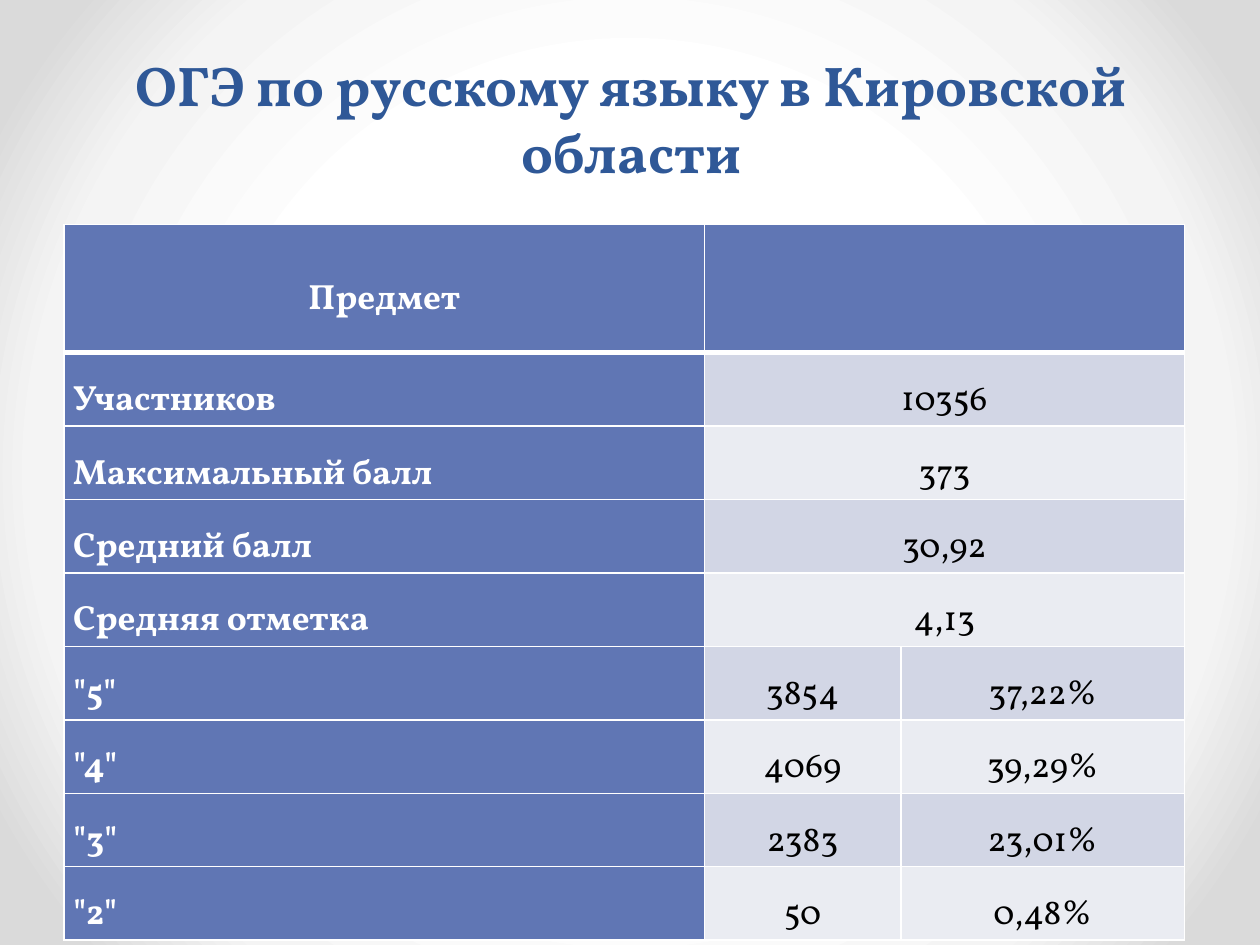
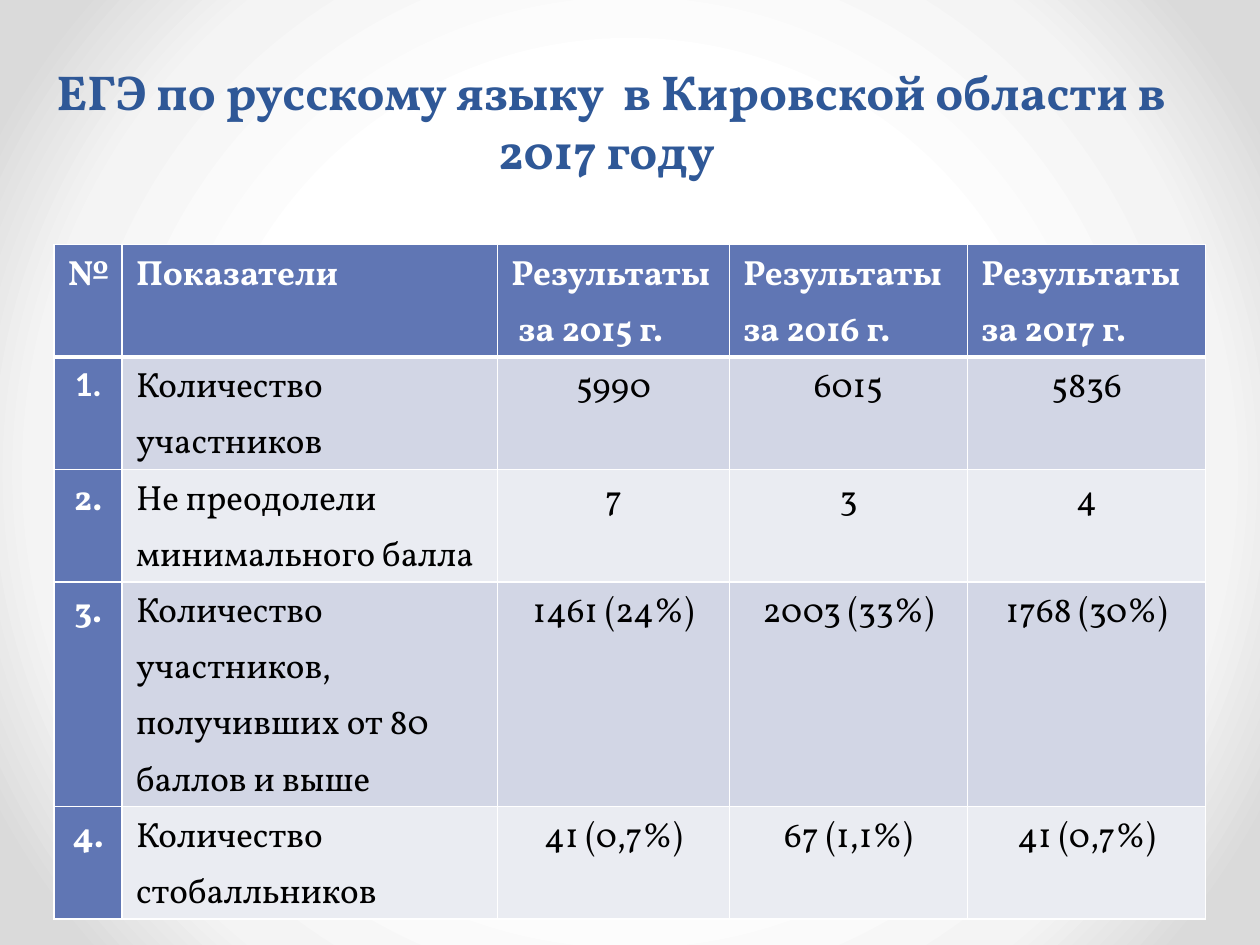
from pptx import Presentation
from pptx.util import Inches, Pt
from pptx.dml.color import RGBColor
from pptx.enum import shapes, text
from pptx.oxml import parse_xml
from pptx.oxml.ns import nsdecls, qn

# Theme
THEME = dict(
    font="Vollkorn", title="2F5897", head="6076B4", odd="D2D6E5", even="EAECF2",
    light="FFFFFF", dark="000000", dot="808080", size=20, line=1, rule=3,
    stops=[(50, "FFFFFF"), (76, "F4F4F4"), (92, "DADADA")],
)
LEFT, MID, JUST = (text.PP_ALIGN.LEFT, text.PP_ALIGN.CENTER, text.PP_ALIGN.JUSTIFY)
TOP, HALF, LOW = (text.MSO_ANCHOR.TOP, text.MSO_ANCHOR.MIDDLE, text.MSO_ANCHOR.BOTTOM)
DOTS = [(9.25, 7.11), (0.62, 7.11)]

# Content: a missing cell (None) joins the one to its left; "\n" splits paragraphs
SLIDES = [
    dict(
        title="ОГЭ по русскому языку в Кировской области",
        box=(0.51, 0.21, 9, 1.31), size=32,
        at=(0.51, 1.78), cols=[5.08, 1.56, 2.25], rows=[1.02] + [0.58] * 8,
        pad=0.07, gap=1.5, heads=[MID] * 3, body=[LEFT, MID, MID],
        anchors=[HALF, LOW, LOW],
        cells=[
            ("Предмет", "", None),
            ("Участников", "10356", None),
            ("Максимальный балл", "373", None),
            ("Средний балл", "30,92", None),
            ("Средняя отметка", "4,13", None),
            ('"5"', "3854", "37,22%"),
            ('"4"', "4069", "39,29%"),
            ('"3"', "2383", "23,01%"),
            ('"2"', "50", "0,48%"),
        ],
    ),
    dict(
        title="ЕГЭ по русскому языку  в Кировской области в 2017 году ",
        box=(0.35, 0.76, 9, 0.71), size=28,
        at=(0.43, 1.94), cols=[0.54, 2.98, 1.84, 1.89, 1.89],
        rows=[0.88, 0.89, 0.89, 1.78, 0.89],
        pad=0.11, gap=1.15, heads=[MID] + [JUST] * 4, body=[MID, LEFT] + [MID] * 3,
        anchors=[TOP] * 5, fonts={"1.": "Calibri"},
        cells=[
            ("№", "Показатели", "Результаты\n за 2015 г.",
             "Результаты \nза 2016 г.", "Результаты за 2017 г."),
            ("1.", "Количество участников", "5990", "6015", "5836"),
            ("2.", "Не преодолели минимального балла", "7", "3", "4"),
            ("3.", "Количество участников, получивших от 80 баллов и выше",
             "1461 (24%)", "2003 (33%)", "1768 (30%)"),
            ("4.", "Количество\nстобалльников", "41 (0,7%)", "67 (1,1%)", "41 (0,7%)"),
        ],
    ),
]


def color(name):
    return RGBColor.from_string(THEME[name])


def add_run(para, words, size, tint, bold, font=THEME["font"]):
    run = para.add_run()
    run.text = words
    run.font.name, run.font.size, run.font.bold = font, Pt(size), bold
    run.font.color.rgb = color(tint)


# Shared backdrop: radial gradient and two dots on the master
def set_back(master):
    master.background.fill.gradient()
    old = master.element.find(".//" + qn("a:gradFill"))
    stops = "".join(f'<a:gs pos="{pos}000"><a:srgbClr val="{tint}"/></a:gs>'
                    for pos, tint in THEME["stops"])
    old.getparent().replace(old, parse_xml(
        f'<a:gradFill {nsdecls("a")} rotWithShape="1"><a:gsLst>{stops}</a:gsLst>'
        '<a:path path="circle"><a:fillToRect l="50000" t="50000" r="50000" b="50000"/>'
        '</a:path></a:gradFill>'))


def add_dots(slide, master):
    for num, (x, y) in enumerate(DOTS):
        dot = slide.shapes.add_shape(shapes.MSO_SHAPE.OVAL, Inches(x), Inches(y),
                                     Inches(0.09), Inches(0.09))
        dot.shadow.inherit = False
        dot.fill.solid()
        dot.fill.fore_color.rgb = color("dot")
        dot.line.fill.background()
        dot.element.nvSpPr.cNvPr.set("id", str(50 + num))
        master.element.cSld.spTree.append(dot.element)


# Title placeholder
def set_title(slide, data):
    head = slide.shapes.title
    head.left, head.top, head.width, head.height = map(Inches, data["box"])
    frame = head.text_frame
    frame.vertical_anchor, frame.word_wrap = LOW, True
    frame.auto_size = text.MSO_AUTO_SIZE.NONE
    para = frame.paragraphs[0]
    para.alignment = MID
    add_run(para, data["title"], data["size"], "title", True)


# Table
def set_edges(cell, top):
    props = cell._tc.get_or_add_tcPr()
    for spot, side in enumerate("LRTB"):
        wide = THEME["rule" if top and side == "B" else "line"]
        props.insert(spot, parse_xml(
            f'<a:ln{side} {nsdecls("a")} w="{Pt(wide)}"><a:solidFill>'
            f'<a:srgbClr val="{THEME["light"]}"/></a:solidFill></a:ln{side}>'))


def fill_cell(cell, words, row, col, data):
    top = row == 0
    key = top or col == 0
    cell.fill.solid()
    cell.fill.fore_color.rgb = color("head" if key else "odd" if row % 2 else "even")
    set_edges(cell, top)
    cell.margin_left = cell.margin_right = Inches(data["pad"])
    cell.margin_top = cell.margin_bottom = 0
    cell.vertical_anchor = data["anchors"][col]
    if not words:
        return
    frame = cell.text_frame
    for num, part in enumerate(words.split("\n")):
        para = frame.add_paragraph() if num else frame.paragraphs[0]
        para.alignment = data["heads" if top else "body"][col]
        para.line_spacing = data["gap"]
        font = data.get("fonts", {}).get(words, THEME["font"])
        add_run(para, part, THEME["size"], "light" if key else "dark", key, font)


def add_grid(slide, data):
    cols, rows = data["cols"], data["rows"]
    x, y = data["at"]
    grid = slide.shapes.add_table(len(rows), len(cols), Inches(x), Inches(y),
                                  Inches(sum(cols)), Inches(sum(rows))).table
    for col, wide in zip(grid.columns, cols):
        col.width = Inches(wide)
    for row, high in zip(grid.rows, rows):
        row.height = Inches(high)
    for r, line in enumerate(data["cells"]):
        for c, words in enumerate(line):
            fill_cell(grid.cell(r, c), words, r, c, data)
            if words is None:
                grid.cell(r, c - 1).merge(grid.cell(r, c))


def main():
    prs = Presentation()
    prs.slide_width, prs.slide_height = Inches(10), Inches(7.5)
    master = prs.slide_master
    set_back(master)
    for num, data in enumerate(SLIDES):
        slide = prs.slides.add_slide(prs.slide_layouts.get_by_name("Title Only"))
        if num == 0:
            add_dots(slide, master)
        set_title(slide, data)
        add_grid(slide, data)
    prs.save("out.pptx")


if __name__ == "__main__":
    main()
